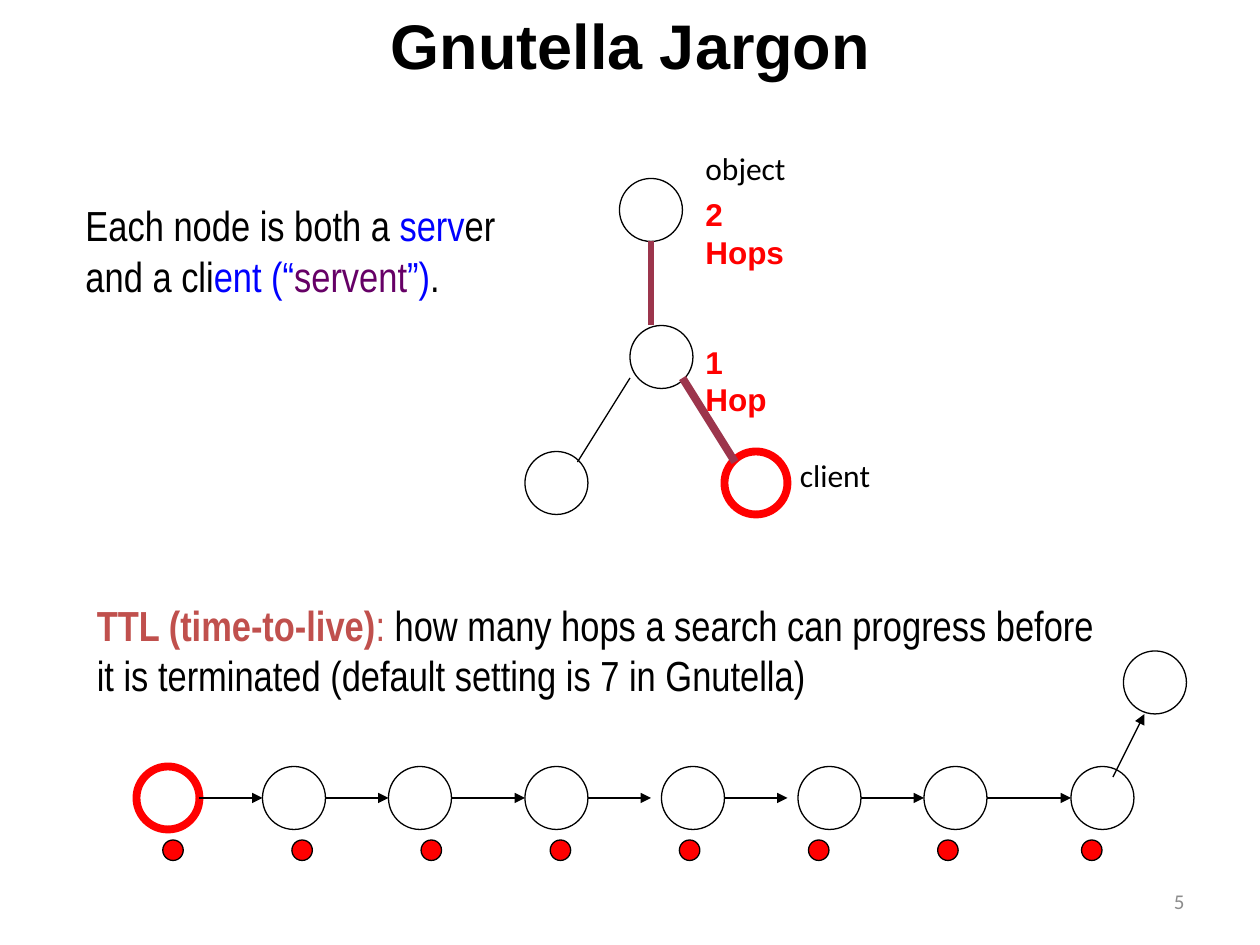
from lxml import etree
from pptx import Presentation
from pptx import util as u
from pptx.dml.color import RGBColor
from pptx.enum import shapes, text
from pptx.oxml.ns import qn

# The slide is a grid of 120 columns by 90 rows, 12 cells to the inch
CELL = 1 / 12
NODE = 6
BLACK, RED, MAROON = "000000", "FF0000", "9C354C"
BLUE, PURPLE, BRICK, GREY = "0000FF", "660066", "C0504D", "8C8C8C"


def grid(n):
    return u.Inches(n * CELL)


def color(hex_string):
    return RGBColor.from_string(hex_string)


def write(sp, runs, font, size, bold=False, wrap=True,
          align=text.PP_ALIGN.LEFT, anchor=text.MSO_ANCHOR.TOP):
    """Fill a shape with one paragraph of (words, colour[, bold]) runs."""
    tf = sp.text_frame
    tf.word_wrap = wrap
    tf.auto_size = text.MSO_AUTO_SIZE.NONE
    tf.vertical_anchor = anchor
    p = tf.paragraphs[0]
    p.alignment = align
    for words, hex_string, *own_bold in runs:
        r = p.add_run()
        r.text = words
        r.font.name = font
        r.font.size = u.Pt(size)
        r.font.bold = own_bold[0] if own_bold else bold
        r.font.color.rgb = color(hex_string)


def add_text(s, left, top, width, height, runs, font, size, **style):
    box = [u.Inches(v) for v in (left, top, width, height)]
    write(s.shapes.add_textbox(*box), runs, font, size, **style)


def add_circle(s, col, row, size=NODE, fill=None, line=BLACK, weight=0.75):
    sp = s.shapes.add_shape(shapes.MSO_SHAPE.OVAL, grid(col), grid(row),
                            grid(size), grid(size))
    sp.shadow.inherit = False
    if fill:
        sp.fill.solid()
        sp.fill.fore_color.rgb = color(fill)
    else:
        sp.fill.background()
    sp.line.color.rgb = color(line)
    sp.line.width = u.Pt(weight)


def add_line(s, start, end, line=BLACK, weight=0.75, arrow=False):
    cx = s.shapes.add_connector(shapes.MSO_CONNECTOR.STRAIGHT,
                                *(grid(n) for n in (*start, *end)))
    cx.line.color.rgb = color(line)
    cx.line.width = u.Pt(weight)
    sp_pr = cx._element.spPr
    if arrow:
        etree.SubElement(sp_pr.find(qn("a:ln")), qn("a:tailEnd"), type="triangle")
    etree.SubElement(sp_pr, qn("a:effectLst"))


def add_title(s, words):
    sp = s.shapes.title
    sp.left, sp.top = u.Inches(3), u.Inches(0)
    sp.width, sp.height = u.Inches(4.01), u.Inches(0.7)
    write(sp, [(words, BLACK)], "Arial", 36, bold=True, wrap=False,
          align=text.PP_ALIGN.CENTER)


def add_statements(s):
    middle = text.MSO_ANCHOR.MIDDLE
    add_text(s, 0.67, 4.7, 8.17, 0.91, [
        ("TTL (time-to-live)", BRICK, True),
        (": ", BRICK),
        ("how many hops a search can progress before it is terminated "
         "(default setting is 7 in Gnutella)", BLACK),
    ], "Arial Narrow", 24, anchor=middle)
    add_text(s, 0.58, 1.53, 3.62, 0.91, [
        ("Each node is both a ", BLACK), ("serv", BLUE),
        ("er and a cli", BLACK), ("ent (“", BLUE), ("servent", PURPLE),
        ("”)", BLUE), (".", BLACK),
    ], "Arial Narrow", 24, anchor=middle)


def add_tree(s):
    # Nodes, with the client in red
    for col, row in ((59, 17), (60, 31), (50, 43)):
        add_circle(s, col, row)
    add_circle(s, 69, 43, line=RED, weight=4.5)
    # Links, with the path of the search in maroon
    add_line(s, (62, 23), (62, 31), MAROON, 3)
    add_line(s, (60, 36), (55, 44))
    add_line(s, (65, 36), (70, 44), MAROON, 4.5)
    # Labels
    for words, top, width in (("1 Hop", 2.67, 0.82), ("2 Hops", 1.5, 0.94)):
        add_text(s, 5.5, top, width, 0.37, [(words, RED)], "Arial", 18, bold=True)
    for words, left, top in (("object", 5.5, 1.13), ("client", 6.25, 3.57)):
        add_text(s, left, top, 0.85, 0.4, [(words, BLACK)], "Calibri", 18, wrap=False)


def add_chain(s):
    row = 73
    cols = (13, 25, 37, 50, 63, 76, 88, 102)
    arrow_ends = (25, 37, 50, 62, 75, 88, 102)
    # Nodes, starting at the client
    add_circle(s, cols[0], row, line=RED, weight=4.5)
    for col in cols[1:]:
        add_circle(s, col, row)
    for col, end in zip(cols, arrow_ends):
        middle = row + NODE / 2
        add_line(s, (col + NODE, middle), (end, middle), arrow=True)
    # Last hop, up to the right
    add_circle(s, 107, 62)
    add_line(s, (106, 74), (109, 68), arrow=True)
    # Red dots: seven evenly spaced, the eighth under the last node
    for col in [15.5 + 12.3 * i for i in range(7)] + [103]:
        add_circle(s, col, 80, size=1.95, fill=RED)


def main():
    prs = Presentation()
    prs.slide_width, prs.slide_height = grid(120), grid(90)
    s = prs.slides.add_slide(prs.slide_layouts[5])
    add_title(s, "Gnutella Jargon")
    add_statements(s)
    add_tree(s)
    add_chain(s)
    # Page number
    add_text(s, 7.17, 6.95, 2.33, 0.4, [("5", GREY)], "Calibri", 12,
             align=text.PP_ALIGN.RIGHT, anchor=text.MSO_ANCHOR.MIDDLE)
    prs.save("out.pptx")


if __name__ == "__main__":
    main()
